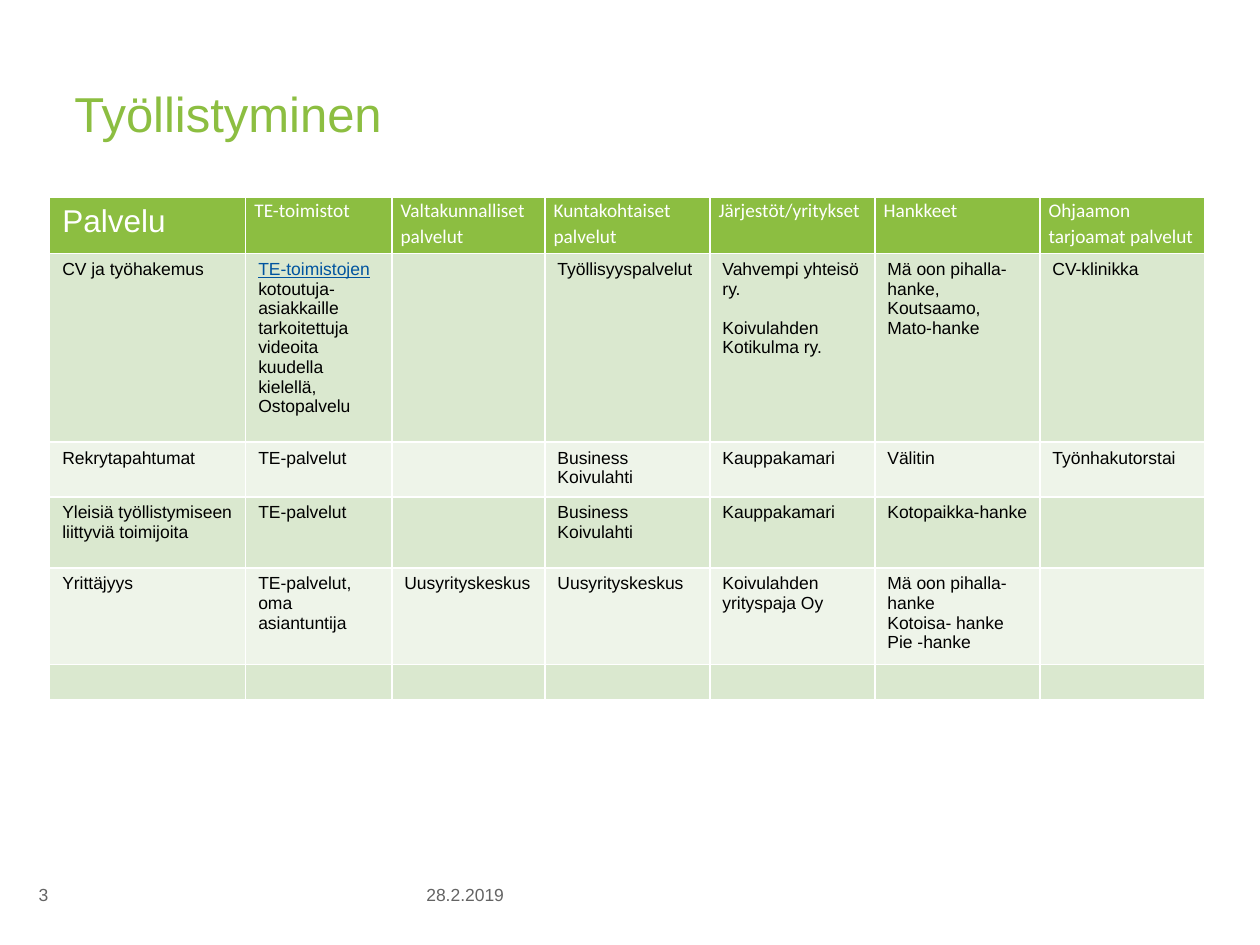
from lxml.etree import SubElement as Sub
from pptx import Presentation
from pptx.dml.color import RGBColor as RGB
from pptx.enum.text import MSO_ANCHOR as Anchor, PP_ALIGN as Align
from pptx.oxml.ns import qn
from pptx.util import Pt

GREEN = RGB(0x8C, 0xBE, 0x41)
BANDS = RGB(0xDA, 0xE8, 0xCF), RGB(0xEE, 0xF4, 0xE9)
WHITE = RGB(0xFF, 0xFF, 0xFF)
BLACK = RGB(0, 0, 0)
GREY = RGB(0x64, 0x64, 0x64)
BLUE = RGB(0x00, 0x54, 0x9F)

TITLE = {"name": "Arial", "size": Pt(28), "color": GREEN, "bold": False}
FOOT = {"name": "Arial", "size": Pt(10), "color": GREY}
LEAD = {"name": "Arial", "size": Pt(18), "color": WHITE}
HEAD = {"name": "Calibri", "size": Pt(11), "color": WHITE}
BODY = {"name": "Arial", "size": Pt(10), "color": BLACK}
LINK = BODY | {"color": BLUE, "underline": True}

LINK_TEXT = "TE-toimistojen"
COLS = [112, 83.5, 87.5] + [94.3] * 4
ROWS = [32, 107.7, 29.7, 40.6, 52, 20.3]
HEADS = ["Palvelu", "TE-toimistot", "Valtakunnalliset palvelut",
         "Kuntakohtaiset palvelut", "Järjestöt/yritykset", "Hankkeet",
         "Ohjaamon tarjoamat palvelut"]
# Each line of a cell is a paragraph.
CELLS = [
    ["CV ja työhakemus",
     LINK_TEXT + " kotoutuja-asiakkaille tarkoitettuja videoita kuudella "
     "kielellä,\nOstopalvelu",
     "", "Työllisyyspalvelut",
     "Vahvempi yhteisö ry.\nKoivulahden Kotikulma ry.",
     "Mä oon pihalla- hanke,\nKoutsaamo,\nMato-hanke", "CV-klinikka"],
    ["Rekrytapahtumat", "TE-palvelut", "", "Business Koivulahti",
     "Kauppakamari", "Välitin", "Työnhakutorstai"],
    ["Yleisiä työllistymiseen liittyviä toimijoita", "TE-palvelut", "",
     "Business\nKoivulahti", "Kauppakamari", "Kotopaikka-hanke", ""],
    ["Yrittäjyys", "TE-palvelut, oma asiantuntija", "Uusyrityskeskus",
     "Uusyrityskeskus", "Koivulahden yrityspaja Oy",
     "Mä oon pihalla- hanke\nKotoisa- hanke\nPie -hanke", ""],
    [""] * 7,
]


def style(font, form):
    for key, val in form.items():
        if key == "color":
            font.color.rgb = val
        else:
            setattr(font, key, val)


def add_run(para, text, form):
    run = para.add_run()
    run.text = text
    style(run.font, form)


def add_title(slide, text):
    title = slide.shapes.title
    title.left, title.top = Pt(42.5), Pt(48)
    title.width, title.height = Pt(635), Pt(70.5)
    frame = title.text_frame
    frame.margin_left = frame.margin_right = 0
    frame.margin_top = frame.margin_bottom = 0
    frame.vertical_anchor = Anchor.TOP
    para = frame.paragraphs[0]
    para.alignment = Align.LEFT
    add_run(para, text, TITLE)


def add_foot(slide, text, left, width, align):
    box = slide.shapes.add_textbox(Pt(left), Pt(497), Pt(width), Pt(28))
    frame = box.text_frame
    frame.word_wrap = True
    frame.vertical_anchor = Anchor.MIDDLE
    para = frame.paragraphs[0]
    para.alignment = align
    add_run(para, text, FOOT)


def edge_cell(cell):
    """Draw white borders, which must come before the fill in the XML."""
    props = cell._tc.get_or_add_tcPr()
    for tag in ("a:lnL", "a:lnR", "a:lnT", "a:lnB"):
        line = Sub(props, qn(tag), w=str(Pt(1)))
        Sub(Sub(line, qn("a:solidFill")), qn("a:srgbClr"), val=str(WHITE))


def fill_cell(cell, text, form, color):
    edge_cell(cell)
    cell.fill.solid()
    cell.fill.fore_color.rgb = color
    frame = cell.text_frame
    for i, line in enumerate(text.split("\n")):
        para = frame.add_paragraph() if i else frame.paragraphs[0]
        if line.startswith(LINK_TEXT):
            add_run(para, LINK_TEXT, LINK)
            line = line.removeprefix(LINK_TEXT)
        if line:
            add_run(para, line, form)
        else:
            # An empty cell keeps its row low only with a small end size.
            Sub(para._p, qn("a:endParaRPr"), sz="1000")


def add_grid(slide):
    frame = slide.shapes.add_table(len(ROWS), len(COLS), Pt(28.4), Pt(113),
                                   Pt(sum(COLS)), Pt(sum(ROWS)))
    table = frame.table
    table.first_row = table.horz_banding = False
    for col, width in zip(table.columns, COLS):
        col.width = Pt(width)
    for row, height in zip(table.rows, ROWS):
        row.height = Pt(height)
    for c, text in enumerate(HEADS):
        cell = table.cell(0, c)
        fill_cell(cell, text, HEAD if c else LEAD, GREEN)
        if c:
            cell.margin_left = cell.margin_right = Pt(5)
            cell.margin_top = cell.margin_bottom = 0
            cell.text_frame.paragraphs[0].line_spacing = 1.07
    for r, texts in enumerate(CELLS):
        for c, text in enumerate(texts):
            fill_cell(table.cell(r + 1, c), text, BODY, BANDS[r % 2])
    groups = table.cell(1, 4).text_frame.paragraphs
    groups[1].space_before = Pt(11.2)


def main():
    prs = Presentation()
    prs.slide_width, prs.slide_height = Pt(720), Pt(540)
    slide = prs.slides.add_slide(prs.slide_layouts[5])
    add_title(slide, "Työllistyminen")
    add_foot(slide, "28.2.2019", 210, 85, Align.RIGHT)
    add_foot(slide, "3", 15, 34, Align.LEFT)
    add_grid(slide)
    prs.save("out.pptx")


if __name__ == "__main__":
    main()
